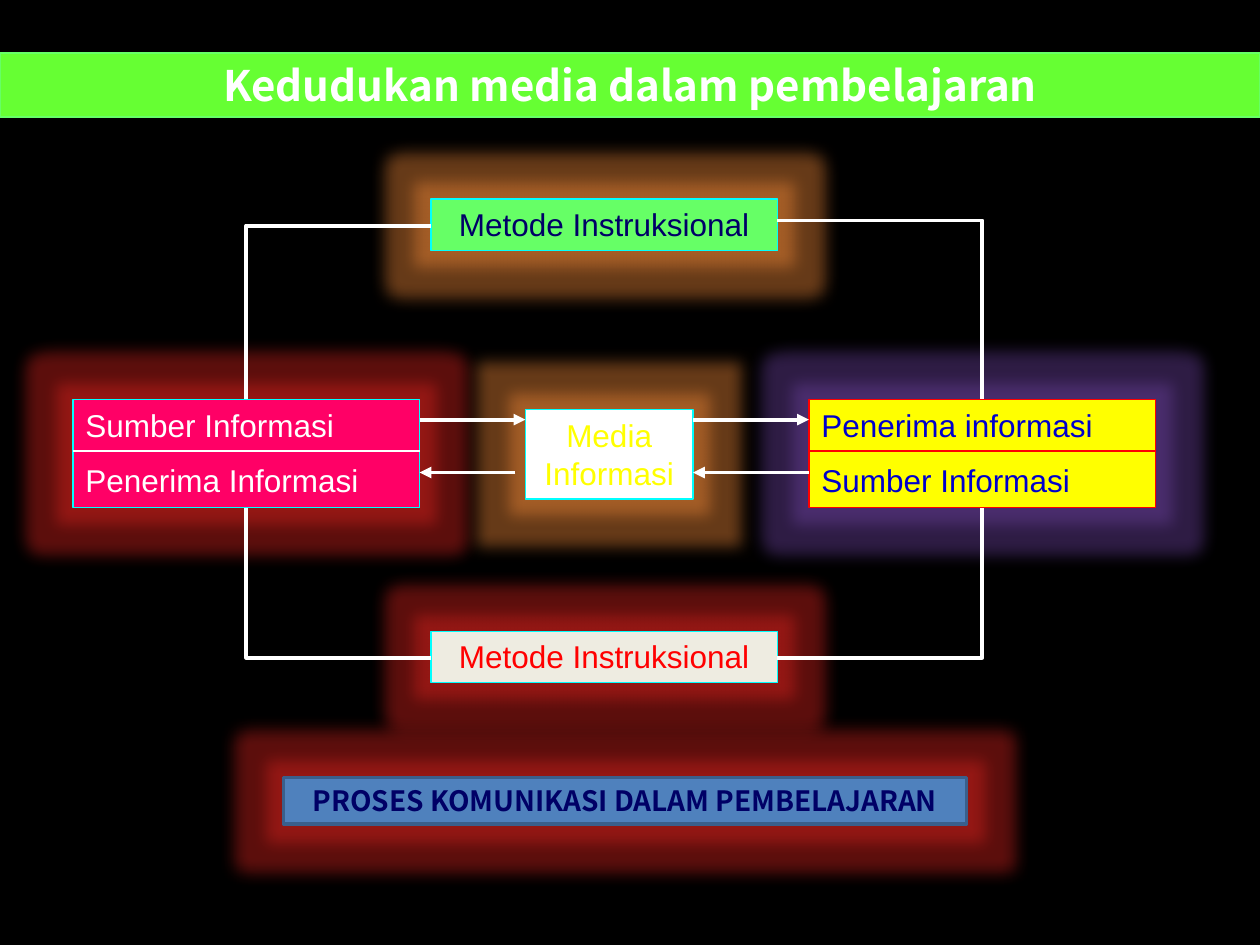
import pptx
import pptx.util
import pptx.dml.color
import pptx.enum.shapes
import pptx.enum.text
import pptx.oxml
import pptx.oxml.ns
from dataclasses import dataclass
from lxml import etree
from pptx.util import Inches

COLORS = {
    "black": "000000", "white": "FFFFFF", "cyan": "00FFFF", "pink": "FF0066",
    "yellow": "FFFF00", "red": "FF0000", "blue": "0000CC", "navy": "000066",
    "cream": "EEECE1", "green": "66FF66", "lime": "66FF33", "steel": "4F81BD",
    "slate": "3A5F8C", "ruby": "E62520", "amber": "FF913C", "violet": "7346AA",
}
GLOW = 18  # points
NOTO = "Noto Sans CJK KR"


@dataclass
class Box:
    left: float
    top: float
    width: float
    height: float
    text: str
    fill: str
    line: str
    ink: str
    glow: str = ""
    center: bool = True
    size: int = 18
    font: str = "Arial"
    bold: bool = False
    weight: float = 0.75


@dataclass
class Link:
    x1: float
    y1: float
    x2: float
    y2: float
    color: str = "white"
    weight: float = 2.25
    arrow: bool = False
    bent: bool = False


def rgb(name: str) -> pptx.dml.color.RGBColor:
    return pptx.dml.color.RGBColor.from_string(COLORS[name])


def add_glow(shape, name: str) -> None:
    effects = shape._element.spPr.find(pptx.oxml.ns.qn("a:effectLst"))
    glow = etree.SubElement(effects, pptx.oxml.ns.qn("a:glow"),
                            rad=str(pptx.util.Pt(GLOW)))
    color = etree.SubElement(glow, pptx.oxml.ns.qn("a:srgbClr"), val=COLORS[name])
    etree.SubElement(color, pptx.oxml.ns.qn("a:alpha"), val="40000")


def draw_box(slide, box: Box) -> None:
    shape = slide.shapes.add_shape(
        pptx.enum.shapes.MSO_SHAPE.RECTANGLE, Inches(box.left), Inches(box.top),
        Inches(box.width), Inches(box.height))
    shape.shadow.inherit = False
    shape.fill.solid()
    shape.fill.fore_color.rgb = rgb(box.fill)
    shape.line.color.rgb = rgb(box.line)
    shape.line.width = pptx.util.Pt(box.weight)
    if box.glow:
        add_glow(shape, box.glow)
    frame = shape.text_frame
    frame.word_wrap = True
    frame.vertical_anchor = pptx.enum.text.MSO_ANCHOR.TOP
    frame.text = box.text
    align = pptx.enum.text.PP_ALIGN
    for index, para in enumerate(frame.paragraphs):
        para.alignment = align.CENTER if box.center else align.LEFT
        if index:
            para.space_before = pptx.util.Pt(10)
        for run in para.runs:
            run.font.name = box.font
            run.font.size = pptx.util.Pt(box.size)
            run.font.bold = box.bold
            run.font.color.rgb = rgb(box.ink)


def draw_link(slide, link: Link) -> None:
    kinds = pptx.enum.shapes.MSO_CONNECTOR
    line = slide.shapes.add_connector(
        kinds.ELBOW if link.bent else kinds.STRAIGHT, Inches(link.x1),
        Inches(link.y1), Inches(link.x2), Inches(link.y2))
    line.line.color.rgb = rgb(link.color)
    line.line.width = pptx.util.Pt(link.weight)
    props = line._element.spPr
    if link.bent:  # one corner only
        props.find(pptx.oxml.ns.qn("a:prstGeom")).set("prst", "bentConnector2")
    if link.arrow:
        etree.SubElement(line.line._get_or_add_ln(),
                         pptx.oxml.ns.qn("a:tailEnd"), type="triangle")
    etree.SubElement(props, pptx.oxml.ns.qn("a:effectLst"))


# Shared grid
WIDE, TALL, LOW = 2.75, 0.86, 0.41
LEFT, MID, RIGHT, ROW = 0.58, 3.42, 6.42, 3.17
MEDIA, SPAN = 4.17, 1.33
METHOD = "Metode Instruksional"

BOXES = [
    Box(LEFT, ROW, WIDE, TALL, "Sumber Informasi\nPenerima Informasi",
        "pink", "cyan", "white", "ruby", center=False),
    Box(MEDIA, 3.25, SPAN, 0.71, "Media Informasi",
        "white", "cyan", "yellow", "amber"),
    Box(RIGHT, ROW, WIDE, TALL, "Penerima informasi\nSumber Informasi",
        "yellow", "red", "blue", "violet", center=False),
    Box(MID, 5.01, WIDE, LOW, METHOD, "cream", "cyan", "red", "ruby"),
    Box(MID, 1.58, WIDE, LOW, METHOD, "green", "cyan", "navy", "amber"),
    Box(2.25, 6.17, 5.42, 0.37, "PROSES KOMUNIKASI DALAM PEMBELAJARAN",
        "steel", "slate", "navy", "ruby", size=16, font=NOTO, bold=True, weight=2),
    Box(0, 0.42, 10, 0.51, "Kedudukan media dalam pembelajaran",
        "lime", "green", "white", size=24, font=NOTO, bold=True),
]

# Row dividers inside the two side boxes
LINKS = [Link(x, 3.58, x + WIDE, 3.58, color, 0.75)
         for x, color in ((LEFT, "white"), (RIGHT, "red"))]

# Elbows from the method boxes to the side boxes
LINKS += [Link(x1, y1, x2, y2, bent=True) for x1, y1, x2, y2 in (
    (MID, 5.22, LEFT + WIDE / 2, ROW + TALL),
    (MID + WIDE, 5.22, RIGHT + WIDE / 2, ROW + TALL),
    (MID, 1.79, LEFT + WIDE / 2, ROW),
    (MID + WIDE, 1.75, RIGHT + WIDE / 2, ROW))]

# Arrows to and from the media box
LINKS += [Link(x1, y, x2, y, arrow=True) for x1, x2, y in (
    (LEFT + WIDE, MEDIA, 3.33), (MEDIA + SPAN, RIGHT, 3.33),
    (RIGHT, MEDIA + SPAN, 3.75), (4.09, LEFT + WIDE, 3.75))]


def main() -> None:
    deck = pptx.Presentation()
    deck.slide_width, deck.slide_height = Inches(10), Inches(7.5)
    slide = deck.slides.add_slide(deck.slide_layouts[6])
    slide.background.fill.solid()
    slide.background.fill.fore_color.rgb = rgb("black")
    for box in BOXES:
        draw_box(slide, box)
    for link in LINKS:
        draw_link(slide, link)
    deck.save("out.pptx")


if __name__ == "__main__":
    main()
